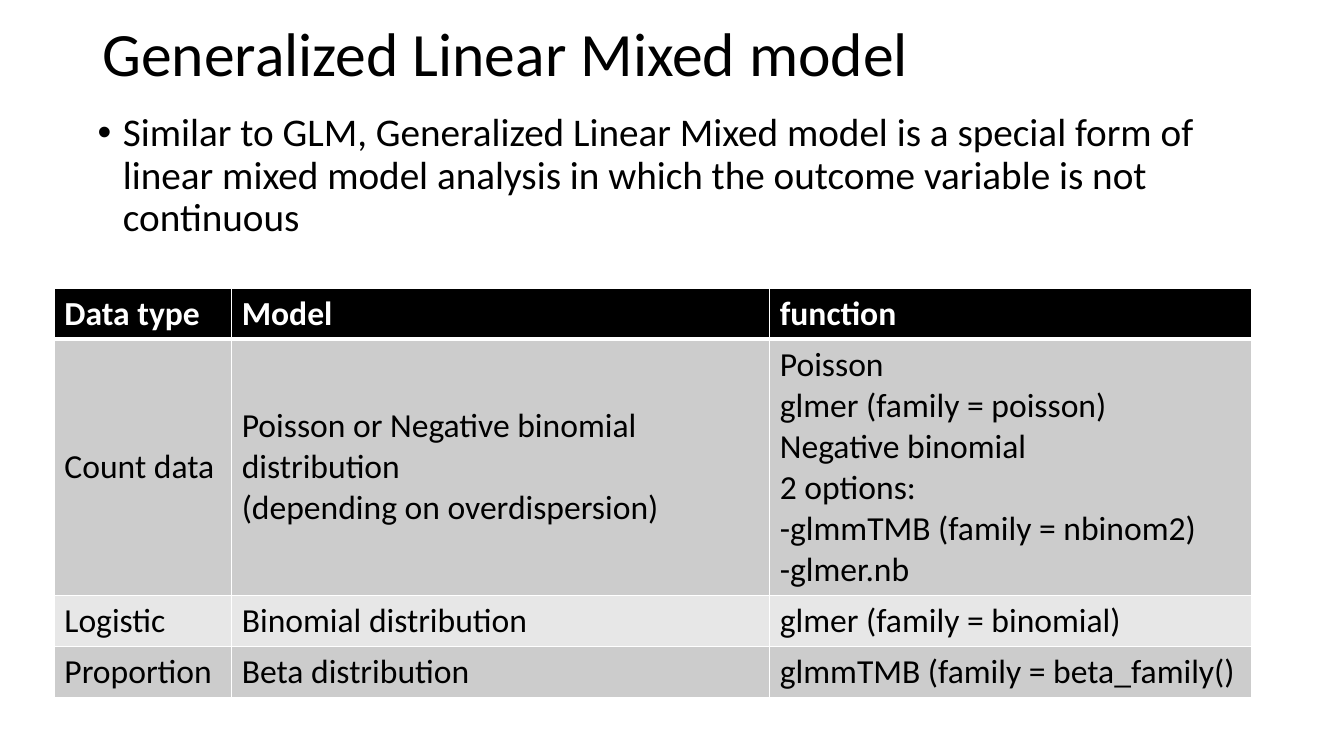
import pptx
import pptx.dml.color
import pptx.enum.text
import pptx.oxml
import pptx.oxml.ns
import pptx.util
from pptx.util import Cm

BLACK, WHITE, GREY, PALE = "000000", "FFFFFF", "CCCCCC", "E7E7E7"
MIDDLE = pptx.enum.text.MSO_ANCHOR.MIDDLE
TOP = pptx.enum.text.MSO_ANCHOR.TOP


def color(value):
    return pptx.dml.color.RGBColor.from_string(value)


def style(para, size, value, bold=False):
    para.alignment = pptx.enum.text.PP_ALIGN.LEFT
    para.font.name = "Calibri"
    para.font.size = pptx.util.Pt(size)
    para.font.bold = bold
    para.font.color.rgb = color(value)


deck = pptx.Presentation()
deck.slide_width, deck.slide_height = Cm(33.87), Cm(19.05)
page = deck.slides.add_slide(deck.slide_layouts[5])

# Title
title = page.shapes.title
title.left, title.top, title.width, title.height = Cm(2.33), Cm(-0.41), Cm(29.21), Cm(3.68)
title.text_frame.text = "Generalized Linear Mixed model"
title.text_frame.vertical_anchor = MIDDLE
para = title.text_frame.paragraphs[0]
style(para, 44, BLACK)
para.line_spacing = 0.9

# Bulleted introduction
intro = page.shapes.add_textbox(Cm(2.21), Cm(2.72), Cm(29.21), Cm(4))
intro.text_frame.word_wrap = True
para = intro.text_frame.paragraphs[0]
para.text = (
    "Similar to GLM, Generalized Linear Mixed model is a special form of "
    "linear mixed model analysis in which the outcome variable is not continuous"
)
style(para, 28, BLACK)
para.line_spacing = 0.9
para.space_before = pptx.util.Pt(10)
properties = para._p.get_or_add_pPr()
properties.set("marL", str(Cm(0.64)))
properties.set("indent", str(Cm(-0.64)))
namespace = pptx.oxml.ns.nsdecls("a")
properties.append(pptx.oxml.parse_xml(f'<a:buFont {namespace} typeface="Arial"/>'))
properties.append(pptx.oxml.parse_xml(f'<a:buChar {namespace} char="•"/>'))

# Table of data types, models and functions
rows = [
    ("Data type", "Model", "function"),
    (
        "Count data",
        "Poisson or Negative binomial distribution\n(depending on overdispersion)",
        "Poisson\nglmer (family = poisson)\nNegative binomial\n2 options:\n"
        "-glmmTMB (family = nbinom2)\n-glmer.nb",
    ),
    ("Logistic", "Binomial distribution", "glmer (family = binomial)"),
    ("Proportion", "Beta distribution", "glmmTMB (family = beta_family()"),
]
widths = [4.47, 13.56, 12.14]
heights = [1.29, 6.45, 1.29, 1.29]
fills = [BLACK, GREY, PALE, GREY]

table = page.shapes.add_table(
    len(rows), len(widths), Cm(1.37), Cm(7.26), Cm(sum(widths)), Cm(sum(heights))
).table
for column, width in zip(table.columns, widths):
    column.width = Cm(width)

for row_index, texts in enumerate(rows):
    table.rows[row_index].height = Cm(heights[row_index])
    header = row_index == 0
    for column_index, text in enumerate(texts):
        cell = table.cell(row_index, column_index)
        cell.text = text
        cell.vertical_anchor = TOP if header else MIDDLE
        for para in cell.text_frame.paragraphs:
            style(para, 24, WHITE if header else BLACK, header)

        # White borders, thicker between header and body
        for side in "LRTB":
            thick = (row_index, side) in [(0, "B"), (1, "T")]
            cell._tc.get_or_add_tcPr().append(pptx.oxml.parse_xml(
                f'<a:ln{side} {namespace} w="{pptx.util.Pt(3 if thick else 1)}">'
                f'<a:solidFill><a:srgbClr val="{WHITE}"/></a:solidFill></a:ln{side}>'
            ))
        cell.fill.solid()
        cell.fill.fore_color.rgb = color(fills[row_index])

deck.save("out.pptx")
